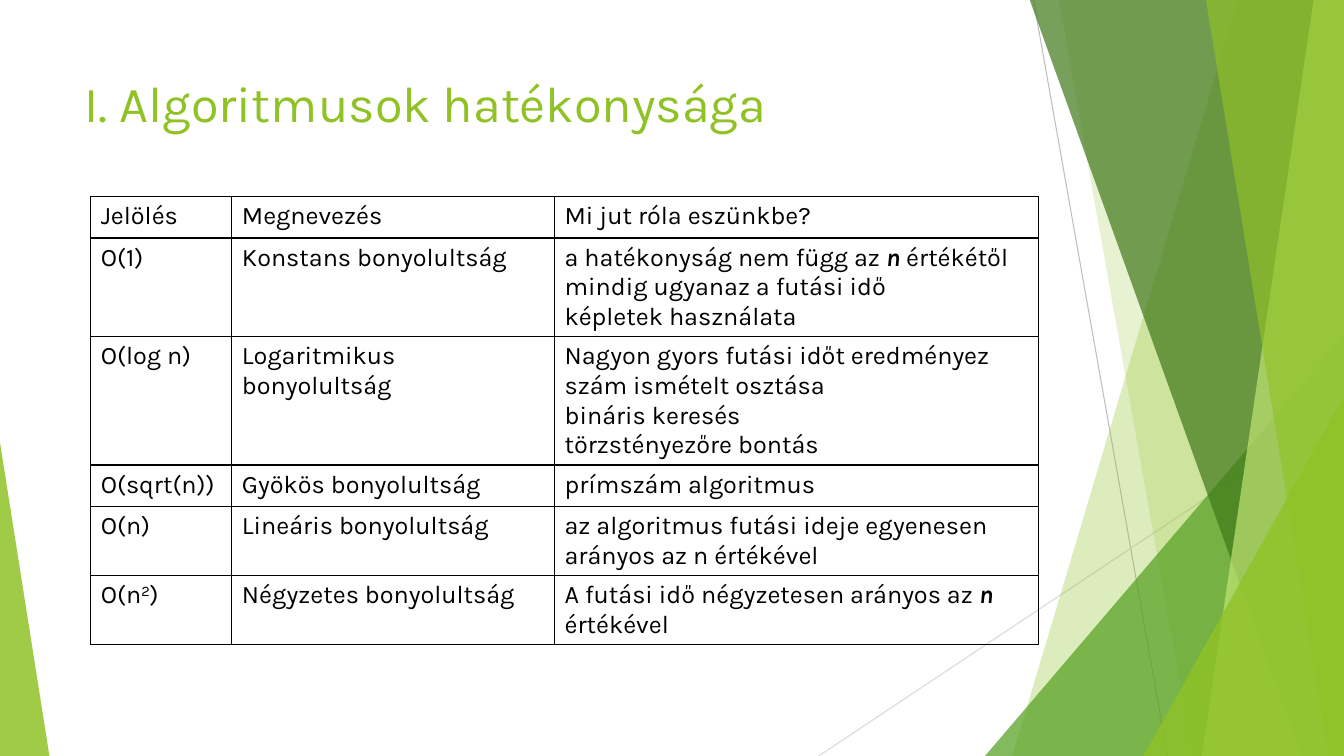
"""Slide on algorithm efficiency: a complexity table beside a green faceted edge."""
from lxml.etree import SubElement
from pptx import Presentation
from pptx.dml.color import RGBColor
from pptx.enum.shapes import MSO_CONNECTOR, MSO_SHAPE
from pptx.enum.text import MSO_ANCHOR, PP_ALIGN
from pptx.oxml import parse_xml
from pptx.oxml.ns import nsdecls, qn
from pptx.util import Inches, Pt


def rgb(hex_color):
    return RGBColor.from_string(hex_color)


def paint(sp, color, alpha):
    sp.shadow.inherit = False
    sp.line.fill.background()
    sp.fill.solid()
    sp.fill.fore_color.rgb = rgb(color)
    clr = sp._element.spPr.find(qn("a:solidFill"))[0]
    SubElement(clr, qn("a:alpha")).set("val", str(alpha * 1000))


W, H, TOP = 13.33, 7.5, -0.01
GREEN = "90C226"

prs = Presentation()
prs.slide_width, prs.slide_height = Inches(W), Inches(H)
s = prs.slides.add_slide(prs.slide_layouts[5])

for x1, y1, x2, y2, color in [
    (10.25, 0, 11.58, H, "BFBFBF"),
    (W, 4.03, 8.12, H, "D9D9D9"),
]:
    ln = s.shapes.add_connector(
        MSO_CONNECTOR.STRAIGHT, Inches(x1), Inches(y1), Inches(x2), Inches(y2))
    ln.line.color.rgb = rgb(color)
    ln.line.width = Pt(0.75)
    SubElement(ln._element.spPr, qn("a:effectLst"))

facets = [
    ("band", 12.28, 10.04, GREEN, 30),
    ("band", 10.5, 11.83, GREEN, 20),
    ("triangle", 9.77, 3.33, 3.56, 1, "54A021", 72),
    ("band", 10.21, 12.91, "3F7819", 70),
    ("band", 13.03, 11.92, "C0E474", 70),
    ("band", 11.96, 13.18, GREEN, 65),
    ("triangle", 11.34, 3.93, 1.99, 1, GREEN, 80),
    ("triangle", 0, 4.39, 0.49, 0, GREEN, 85),
]
for kind, *geometry, color, alpha in facets:
    if kind == "band":
        x_top, x_bottom = geometry
        fb = s.shapes.build_freeform(Inches(x_top), Inches(TOP))
        fb.add_line_segments(
            [(Inches(x), Inches(y)) for x, y in [(W, TOP), (W, H), (x_bottom, H)]])
        sp = fb.convert_to_shape()
    else:
        x, y, w, apex = geometry
        sp = s.shapes.add_shape(
            MSO_SHAPE.ISOSCELES_TRIANGLE, Inches(x), Inches(y), Inches(w), Inches(H - y))
        sp.adjustments[0] = apex
    paint(sp, color, alpha)

title = s.shapes.title
title.left, title.top = Inches(0.74), Inches(0.67)
title.width, title.height = Inches(9.4), Inches(1.44)
tf = title.text_frame
tf.text = "I. Algoritmusok hatékonysága"
tf.word_wrap = True
tf.vertical_anchor = MSO_ANCHOR.TOP
p = tf.paragraphs[0]
p.alignment = PP_ALIGN.LEFT
font = p.runs[0].font
font.name, font.size, font.color.rgb = "Karla", Pt(36), rgb(GREEN)

rows = [
    ("Jelölés", "Megnevezés", "Mi jut róla eszünkbe?"),
    ("O(1)", "Konstans bonyolultság",
     "a hatékonyság nem függ az |n| értékétől\nmindig ugyanaz a futási idő\nképletek használata"),
    ("O(log n)", "Logaritmikus bonyolultság",
     "Nagyon gyors futási időt eredményez\nszám ismételt osztása\n"
     "bináris keresés\ntörzstényezőre bontás"),
    ("O(sqrt(n))", "Gyökös bonyolultság", "prímszám algoritmus"),
    ("O(n)", "Lineáris bonyolultság",
     "az algoritmus futási ideje egyenesen arányos az n értékével"),
    ("O(n|2|)", "Négyzetes bonyolultság",
     "A futási idő négyzetesen arányos az |n| értékével"),
]
widths = [1.4, 3.2, 4.8]
tbl = s.shapes.add_table(
    len(rows), len(widths), Inches(0.9), Inches(1.95),
    Inches(sum(widths)), Inches(0.41 * len(rows))).table
tbl.first_row = tbl.horz_banding = False
for col, width in zip(tbl.columns, widths):
    col.width = Inches(width)

for i, row in enumerate(rows):
    for j, text in enumerate(row):
        cell = tbl.cell(i, j)
        tcPr = cell._tc.get_or_add_tcPr()
        for side in ("lnL", "lnR", "lnT", "lnB"):
            heavy = (i, side) in [(0, "lnB"), (1, "lnT")]
            tcPr.append(parse_xml(
                f'<a:{side} {nsdecls("a")} w="{Pt(1.5 if heavy else 1)}"><a:solidFill>'
                f'<a:srgbClr val="000000"/></a:solidFill></a:{side}>'))
        cell.fill.background()
        tf = cell.text_frame
        for k, line in enumerate(text.split("\n")):
            p = tf.add_paragraph() if k else tf.paragraphs[0]
            for m, part in enumerate(line.split("|")):
                r = p.add_run()
                r.text = part
                r.font.name, r.font.size = "Karla", Pt(18)
                r.font.color.rgb = rgb("000000")
                if m == 1 and part == "2":
                    r._r.get_or_add_rPr().set("baseline", "30000")
                elif m == 1:
                    r.font.bold = r.font.italic = True

prs.save("out.pptx")
